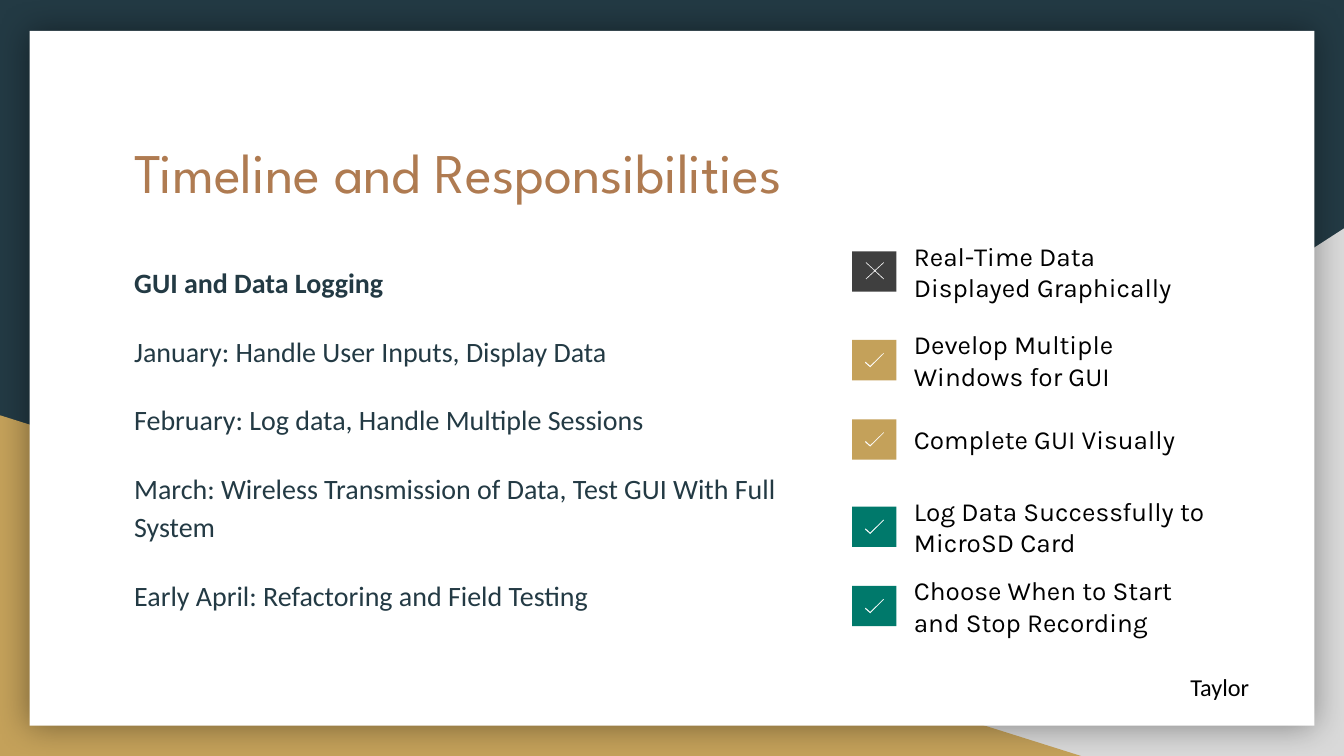
import pptx
import pptx.dml.color
import pptx.enum.shapes
import pptx.enum.text
import pptx.oxml
import pptx.oxml.ns
import pptx.util
from pptx.util import Inches

COLOURS = {
    "navy": "233A44", "grey": "D9D9D9", "gold": "C4A15A", "white": "FFFFFF",
    "copper": "AF7B51", "charcoal": "3F3F3F", "green": "00796B", "black": "000000",
}
SHAPES = pptx.enum.shapes.MSO_SHAPE
ALIGN = pptx.enum.text.PP_ALIGN
ANCHOR = pptx.enum.text.MSO_ANCHOR

# Icon outlines in thousandths of an inch, from the icon's top left corner
ICON_BOX = [(0, 0), (330, 0), (330, 300), (0, 300)]
CHECK = [(240, 100), (135, 205), (95, 170), (100, 160), (135, 192), (235, 95)]
CROSS = [(100, 85), (105, 80), (170, 140), (235, 80), (240, 85), (175, 145),
         (240, 205), (235, 210), (170, 150), (105, 210), (100, 205), (165, 145)]

SCHEDULE = [
    "GUI and Data Logging",
    "January: Handle User Inputs, Display Data",
    "February: Log data, Handle Multiple Sessions",
    "March: Wireless Transmission of Data, Test GUI With Full System",
    "Early April: Refactoring and Field Testing",
]

# Top, mark, colour, text width, text
TASKS = [
    (1.87, CROSS, "charcoal", 2.23, "Real-Time Data Displayed Graphically"),
    (2.53, CHECK, "gold", 2.3, "Develop Multiple Windows for GUI"),
    (3.12, CHECK, "gold", 2.23, "Complete GUI Visually"),
    (3.77, CHECK, "green", 2.3, "Log Data Successfully to MicroSD Card"),
    (4.36, CHECK, "green", 2.23, "Choose When to Start and Stop Recording"),
]


def rgb(name):
    return pptx.dml.color.RGBColor.from_string(COLOURS[name])


def paint(shape, colour):
    shape.shadow.inherit = False
    shape.fill.solid()
    shape.fill.fore_color.rgb = rgb(colour)
    shape.line.fill.background()


def add_block(slide, kind, left, top, width, height, colour):
    shape = slide.shapes.add_shape(
        kind, Inches(left), Inches(top), Inches(width), Inches(height))
    paint(shape, colour)
    return shape


def add_soft_shadow(shape):
    effects = shape.element.spPr.find(pptx.oxml.ns.qn("a:effectLst"))
    effects.append(pptx.oxml.parse_xml(
        f'<a:outerShdw {pptx.oxml.ns.nsdecls("a")} blurRad="{pptx.util.Pt(18)}" '
        'dist="0" algn="ctr" rotWithShape="0"><a:srgbClr val="000000">'
        '<a:alpha val="40000"/></a:srgbClr></a:outerShdw>'))


def add_icon(slide, left, top, mark, colour):
    builder = slide.shapes.build_freeform(*ICON_BOX[0], scale=Inches(1) / 1000)
    builder.add_line_segments(ICON_BOX[1:], close=True)
    builder.move_to(*mark[0])
    builder.add_line_segments(mark[1:], close=True)
    paint(builder.convert_to_shape(Inches(left), Inches(top)), colour)


def format_frame(shape, left, top, width, height, inset, anchor):
    shape.left, shape.top = Inches(left), Inches(top)
    shape.width, shape.height = Inches(width), Inches(height)
    frame = shape.text_frame
    frame.word_wrap = True
    frame.auto_size = pptx.enum.text.MSO_AUTO_SIZE.NONE
    frame.vertical_anchor = anchor
    frame.margin_left = frame.margin_right = Inches(inset)
    frame.margin_top = frame.margin_bottom = Inches(inset)
    return frame


def add_text(slide, left, top, width, height, inset=0.1, anchor=ANCHOR.TOP):
    box = slide.shapes.add_textbox(0, 0, 0, 0)
    return format_frame(box, left, top, width, height, inset, anchor)


def write(paragraph, text, font, size, colour, bold=False, align=ALIGN.LEFT):
    paragraph.alignment = align
    run = paragraph.add_run()
    run.text = text
    run.font.name = font
    run.font.size = pptx.util.Pt(size)
    run.font.color.rgb = rgb(colour)
    run.font.bold = bold


def add_backdrop(slide):
    slide.background.fill.solid()
    slide.background.fill.fore_color.rgb = rgb("navy")
    corner = add_block(slide, SHAPES.RIGHT_TRIANGLE, 3.92, 1.7, 6.08, 3.93, "grey")
    corner.element.spPr.xfrm.set("flipH", "1")
    add_block(slide, SHAPES.RIGHT_TRIANGLE, 0, 3.09, 8.06, 2.54, "gold")
    card = add_block(slide, SHAPES.RECTANGLE, 0.22, 0.23, 9.56, 5.17, "white")
    add_soft_shadow(card)


def add_title(slide, text):
    title = slide.shapes.title
    title.element.getparent().append(title.element)  # in front of the card
    frame = format_frame(title, 0.9, 0.92, 8.21, 0.79, 0.1, ANCHOR.TOP)
    write(frame.paragraphs[0], text, "League Spartan", 30, "copper")


def add_schedule(slide):
    frame = add_text(slide, 0.9, 1.84, 5.05, 2.68)
    for index, text in enumerate(SCHEDULE):
        paragraph = frame.add_paragraph() if index else frame.paragraphs[0]
        paragraph.line_spacing = 1.15
        paragraph.space_before = pptx.util.Pt(16 if index else 0)
        write(paragraph, text, "Calibri", 15, "navy", bold=index == 0)


def add_task(slide, top, mark, colour, width, text):
    add_icon(slide, 6.34, top, mark, colour)
    frame = add_text(slide, 6.8, top - 0.01, width, 0.32, 0, ANCHOR.MIDDLE)
    write(frame.paragraphs[0], text, "Karla", 14, "black")


def main():
    presentation = pptx.Presentation()
    presentation.slide_width = Inches(10)
    presentation.slide_height = Inches(10) * 9 // 16
    slide = presentation.slides.add_slide(presentation.slide_layouts[5])

    add_backdrop(slide)
    add_title(slide, "Timeline and Responsibilities")
    add_schedule(slide)
    for task in TASKS:
        add_task(slide, *task)

    # Presenter
    frame = add_text(slide, 8.54, 4.9, 1.07, 0.32)
    write(frame.paragraphs[0], "Taylor", "Calibri", 13, "black", align=ALIGN.CENTER)

    presentation.save("out.pptx")


if __name__ == "__main__":
    main()
